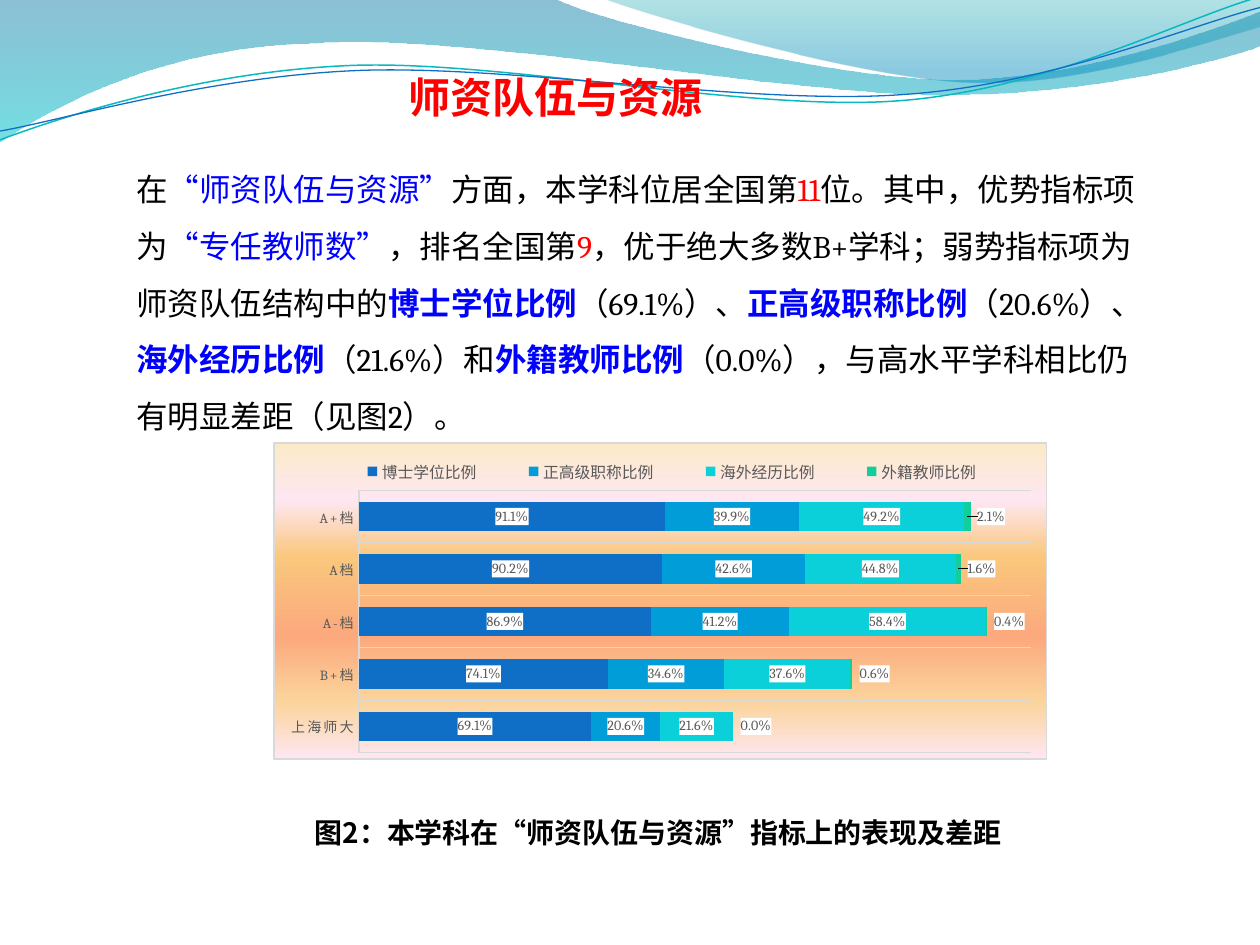
import math

import pptx
import pptx.chart.data
import pptx.dml.color
import pptx.enum.chart
import pptx.enum.text
import pptx.oxml
import pptx.oxml.ns
import pptx.util

Inches, Pt = pptx.util.Inches, pptx.util.Pt
RGB = pptx.dml.color.RGBColor.from_string
qn, nsdecls = pptx.oxml.ns.qn, pptx.oxml.ns.nsdecls
parse_xml = pptx.oxml.parse_xml

CJK = "Noto Sans CJK SC"
THEME = {
    "title": dict(name=CJK, size=Pt(24), bold=True, color="FF0000"),
    "plain": dict(name="Cambria", size=Pt(18), bold=False, color="000000"),
    "quote": dict(name=CJK, size=Pt(18), bold=False, color="0000FF"),
    "rank": dict(name="Cambria", size=Pt(18), bold=False, color="FF0000"),
    "strong": dict(name="Cambria", size=Pt(18), bold=True, color="0000FF"),
    "caption": dict(name=CJK, size=Pt(16), bold=True, color="000000"),
    "caption_mark": dict(name="Calibri", size=Pt(16), bold=True, color="000000"),
    "chart": dict(name="Cambria", size=Pt(10), color="000000"),
    "axis": dict(name="Cambria", size=Pt(8), color="595959"),
    "legend": dict(name="Cambria", size=Pt(9), color="595959"),
    "grid": "D9D9D9",
    "series": ["0F6FC6", "009DD9", "0BD0D9", "10CF9B"],
    "wave": [(0, "0074A1", 45), (100, "00C6CF", 55)],
    "crest": [(0, "00A1A9", 30), (80, "008BBF", 45)],
    "threads": [("0AB8BF", 0.85), ("0F6FC6", 0.75)],
    "panel": [(0, "FBEAC7", 100), (18, "FEE7F2", 100), (36, "FAC77D", 100),
              (61, "FBA97D", 100), (82, "FBD49C", 100), (100, "FEE7F2", 100)],
}

WAVE = [(0, 0), (4.4, -0.01), (4.76, 0.17, 6.64, 0.63, 7.58, 0.63),
        (8.53, 0.63, 9.58, 0.26, 10, 0.09), (10.01, 0.36),
        (9.83, 0.44, 8.7, 0.76, 7.46, 0.75), (6.22, 0.75, 3.82, 0.28, 2.57, 0.34),
        (1.29, 0.36, 0.46, 0.83, -0.01, 1.13)]
CREST = [(4.79, -0.01), (5.09, 0.11, 6.82, 0.62, 7.69, 0.65),
         (8.56, 0.69, 9.61, 0.32, 10, 0.21), (10, 0)]
THREADS = [
    [(0, 1.11), (0.48, 0.93, 1.58, 0.57, 2.77, 0.52),
     (3.95, 0.47, 5.93, 0.89, 7.13, 0.8), (8.33, 0.71, 9.38, 0.15, 9.98, -0.02)],
    [(0, 1.04), (0.47, 0.96, 1.64, 0.61, 2.83, 0.56),
     (4.03, 0.51, 5.97, 0.84, 7.17, 0.75), (8.36, 0.67, 9.41, 0.21, 10, 0.06)],
]
THREAD_CENTRE, THREAD_TILT = (4.99, 0.58), -2.7

BODY = [
    ("在", "plain"), ("“师资队伍与资源”", "quote"),
    ("方面，本学科位居全国第", "plain"), ("11", "rank"),
    ("位。其中，优势指标项为", "plain"), ("“专任教师数”", "quote"),
    ("，排名全国第", "plain"), ("9", "rank"),
    ("，优于绝大多数B+学科；弱势指标项为师资队伍结构中的", "plain"),
    ("博士学位比例", "strong"), ("（69.1%）、", "plain"),
    ("正高级职称比例", "strong"), ("（20.6%）、", "plain"),
    ("海外经历比例", "strong"), ("（21.6%）和", "plain"),
    ("外籍教师比例", "strong"),
    ("（0.0%），与高水平学科相比仍有明显差距（见图2）。", "plain"),
]
CAPTION = [("图2：本学科在", "caption"), ("“", "caption_mark"),
           ("师资队伍与资源", "caption"), ("”", "caption_mark"),
           ("指标上的表现及差距", "caption")]

CATEGORIES = ["上海师大", "B+档", "A-档", "A档", "A+档"]
SERIES = {
    "博士学位比例": [0.691, 0.741, 0.869, 0.902, 0.911],
    "正高级职称比例": [0.206, 0.346, 0.412, 0.426, 0.399],
    "海外经历比例": [0.216, 0.376, 0.584, 0.448, 0.492],
    "外籍教师比例": [0, 0.006, 0.004, 0.016, 0.021],
}


def set_font(font, style):
    for key, value in THEME[style].items():
        if key == "color":
            font.color.rgb = RGB(value)
        else:
            setattr(font, key, value)


def gradient(stops):
    gs = "".join(f'<a:gs pos="{pos * 1000}"><a:srgbClr val="{color}">'
                 f'<a:alpha val="{alpha * 1000}"/></a:srgbClr></a:gs>'
                 for pos, color, alpha in stops)
    return (f'<a:gradFill {nsdecls("a")} rotWithShape="1"><a:gsLst>{gs}</a:gsLst>'
            '<a:lin ang="5400000" scaled="0"/></a:gradFill>')


def turn(x, y, degrees):
    (cx, cy), a = THREAD_CENTRE, math.radians(degrees)
    dx, dy = x - cx, y - cy
    return (cx + dx * math.cos(a) - dy * math.sin(a),
            cy + dx * math.sin(a) + dy * math.cos(a))


def add_outline(s, path, close, tilt=0):
    points = [turn(*seg[i:i + 2], -tilt) for seg in path for i in range(0, len(seg), 2)]
    start, *rest = [(Inches(x), Inches(y)) for x, y in points]
    builder = s.shapes.build_freeform(*start, scale=1.0)
    builder.add_line_segments(rest, close=close)
    sp = builder.convert_to_shape()
    lines = iter(sp.element.xpath(".//a:lnTo"))
    for seg in path[1:]:
        first = next(lines)
        if len(seg) == 6:
            curve = parse_xml(f'<a:cubicBezTo {nsdecls("a")}/>')
            first.addprevious(curve)
            for line in (first, next(lines), next(lines)):
                curve.append(line[0])
                line.getparent().remove(line)
    sp.rotation = tilt
    sp.shadow.inherit = False
    return sp


def add_waves(s):
    waves = []
    for path, stops in ((WAVE, THEME["wave"]), (CREST, THEME["crest"])):
        sp = add_outline(s, path, True)
        sp.line.fill.background()
        sp.element.spPr.find(qn("a:custGeom")).addnext(parse_xml(gradient(stops)))
        waves.append(sp)
    for path, (color, width) in zip(THREADS, THEME["threads"]):
        sp = add_outline(s, path, False, THREAD_TILT)
        sp.fill.background()
        sp.line.color.rgb = RGB(color)
        sp.line.width = Pt(width)
        waves.append(sp)
    for i, sp in enumerate(waves, 2):
        s.shapes.element.insert(i, sp.element)


def fill_text(sp, box, runs, align="LEFT", anchor="TOP", wrap=True, spacing=1.0):
    for key, value in zip(("left", "top", "width", "height"), box):
        setattr(sp, key, Inches(value))
    tf = sp.text_frame
    frame = dict(word_wrap=wrap, auto_size=pptx.enum.text.MSO_AUTO_SIZE.NONE,
                 vertical_anchor=getattr(pptx.enum.text.MSO_ANCHOR, anchor))
    for key, value in frame.items():
        setattr(tf, key, value)
    p = tf.paragraphs[0]
    para = dict(alignment=getattr(pptx.enum.text.PP_ALIGN, align),
                line_spacing=spacing, space_before=Pt(0))
    for key, value in para.items():
        setattr(p, key, value)
    for text, style in runs:
        r = p.add_run()
        r.text = text
        set_font(r.font, style)
    return p


def remove_bullet(p):
    pPr = p._p.get_or_add_pPr()
    for key in ("marL", "indent"):
        pPr.set(key, "0")
    pPr.append(parse_xml(f'<a:buNone {nsdecls("a")}/>'))


def manual_layout(**values):
    items = "".join(f'<c:{key} val="{value}"/>' for key, value in values.items())
    return f'<c:layout {nsdecls("c")}><c:manualLayout>{items}</c:manualLayout></c:layout>'


def add_labels(ser, count, shift):
    style = THEME["axis"]
    flags = "".join(f'<c:show{name} val="{int(name == "Val")}"/>' for name in
                    ("LegendKey", "Val", "CatName", "SerName", "Percent", "BubbleSize"))
    common = (
        '<c:numFmt formatCode="0.0%" sourceLinked="0"/>'
        '<c:spPr><a:solidFill><a:srgbClr val="FFFFFF"/></a:solidFill></c:spPr>'
        f'<c:txPr><a:bodyPr/><a:p><a:pPr><a:defRPr sz="{int(style["size"].pt * 100)}">'
        f'<a:solidFill><a:srgbClr val="{style["color"]}"/></a:solidFill>'
        f'<a:latin typeface="{style["name"]}"/></a:defRPr></a:pPr>'
        f'<a:endParaRPr lang="zh-CN"/></a:p></c:txPr><c:dLblPos val="ctr"/>{flags}')
    no_leaders = (
        '<c:extLst><c:ext uri="{CE6537A1-D6FC-4f65-9D91-7224C49458BB}" '
        'xmlns:c15="http://schemas.microsoft.com/office/drawing/2012/chart">'
        '<c15:showLeaderLines val="0"/></c:ext></c:extLst>')
    moved = "".join(f'<c:dLbl><c:idx val="{i}"/>{manual_layout(x=shift, y=0)}{common}</c:dLbl>'
                    for i in range(count)) if shift else ""
    labels = parse_xml(f'<c:dLbls {nsdecls("c", "a")}>{moved}{common}{no_leaders}</c:dLbls>')
    ser._element.find(qn("c:cat")).addprevious(labels)


def place(el, before, **layout):
    for old in el.findall(qn("c:layout")):
        el.remove(old)
    el.insert(before, parse_xml(manual_layout(**layout)))


def add_indicator_chart(s):
    data = pptx.chart.data.CategoryChartData(number_format="0.0%")
    data.categories = CATEGORIES
    for name, values in SERIES.items():
        data.add_series(name, values)
    box = [Inches(v) for v in (2.17, 3.51, 6.14, 2.52)]
    xl = pptx.enum.chart
    chart = s.shapes.add_chart(xl.XL_CHART_TYPE.BAR_STACKED, *box, data).chart
    set_font(chart.font, "chart")
    chart.has_title = False
    plot = chart.plots[0]
    for key, value in dict(gap_width=79, overlap=100, vary_by_categories=False).items():
        setattr(plot, key, value)
    for ser, color in zip(plot.series, THEME["series"]):
        ser.format.fill.solid()
        ser.format.fill.fore_color.rgb = RGB(color)
        add_labels(ser, len(CATEGORIES), 0.03 if color == THEME["series"][-1] else 0)

    cat, val = chart.category_axis, chart.value_axis
    cat.major_tick_mark = xl.XL_TICK_MARK.NONE
    cat.has_major_gridlines = True
    for line in (cat.format.line, cat.major_gridlines.format.line):
        line.color.rgb = RGB(THEME["grid"])
        line.width = Pt(0.75)
    set_font(cat.tick_labels.font, "axis")
    chart.element.xpath(".//c:catAx//a:defRPr")[0].set("spc", "100")
    for key, value in dict(minimum_scale=0, maximum_scale=2,
                           has_major_gridlines=False, visible=False).items():
        setattr(val, key, value)

    chart.has_legend = True
    chart.legend.position = xl.XL_LEGEND_POSITION.TOP
    chart.legend.include_in_layout = False
    set_font(chart.legend.font, "legend")
    edges = dict(xMode="edge", yMode="edge")
    place(chart.element.xpath(".//c:legend")[0], 1, **edges, x=0.06, y=0.04, w=0.91, h=0.1)
    place(chart.element.xpath(".//c:plotArea")[0], 0, layoutTarget="inner", **edges,
          x=0.11, y=0.15, w=0.87, h=0.83)
    chart.element.find(qn("c:chart")).addnext(parse_xml(
        f'<c:spPr {nsdecls("c", "a")}>{gradient(THEME["panel"])}<a:ln w="9525"><a:solidFill>'
        f'<a:srgbClr val="{THEME["grid"]}"/></a:solidFill></a:ln></c:spPr>'))


def main():
    prs = pptx.Presentation()
    prs.slide_width, prs.slide_height = Inches(10), Inches(7.5)
    s = prs.slides.add_slide(prs.slide_layouts[1])
    add_waves(s)
    fill_text(s.shapes.title, (3.13, 0.52, 2.56, 0.5), [("师资队伍与资源", "title")],
              align="CENTER", anchor="MIDDLE", wrap=False)
    remove_bullet(fill_text(s.placeholders[1], (0.98, 1.15, 8.27, 2.37), BODY, spacing=1.5))
    add_indicator_chart(s)
    fill_text(s.shapes.add_textbox(0, 0, 0, 0), (2.4, 6.42, 5.98, 0.37), CAPTION,
              anchor="MIDDLE")
    prs.save("out.pptx")


if __name__ == "__main__":
    main()
